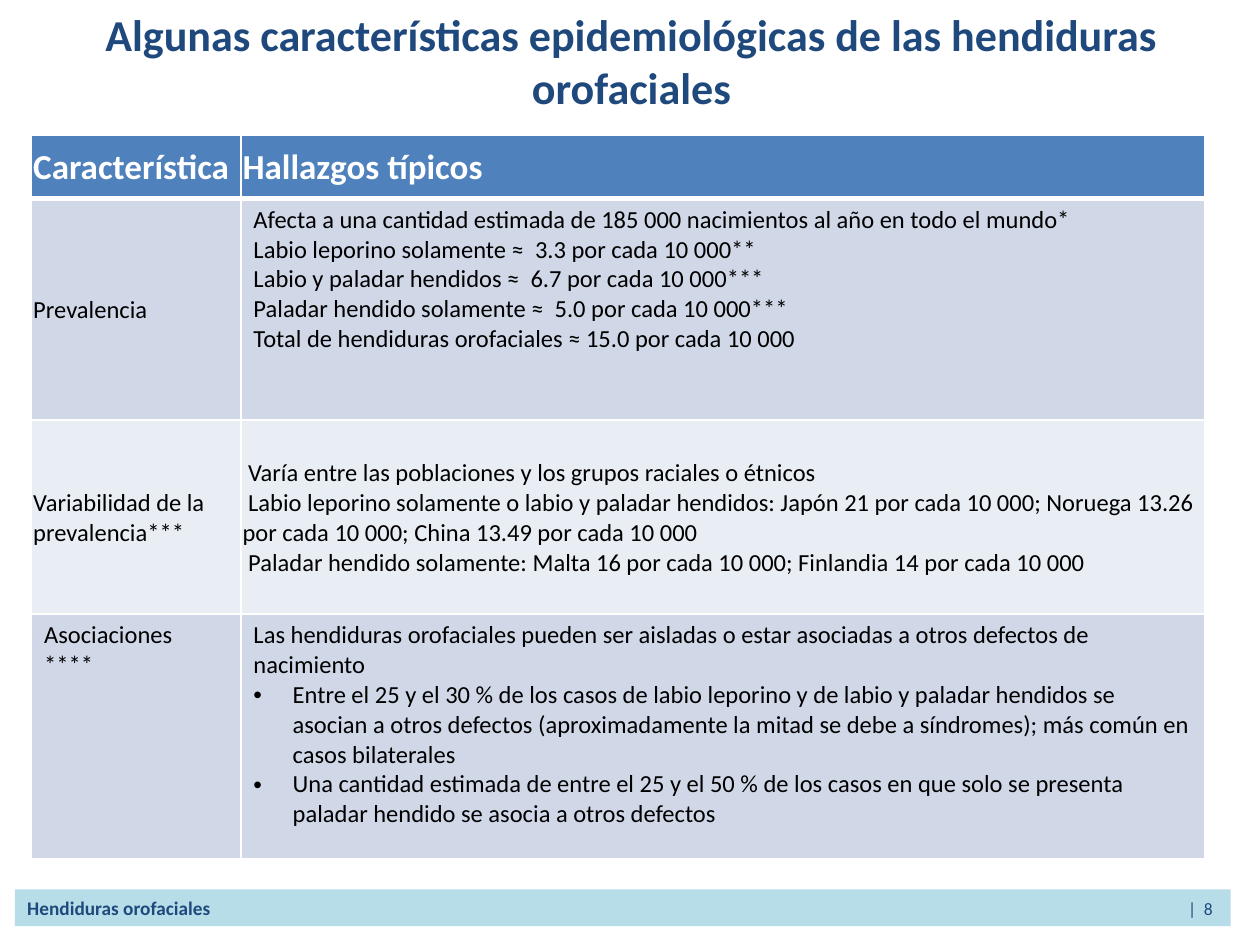
from lxml import etree
from pptx import Presentation
from pptx.dml.color import RGBColor
from pptx.enum.shapes import MSO_SHAPE
from pptx.enum.text import MSO_ANCHOR, PP_ALIGN
from pptx.oxml.ns import qn
from pptx.util import Cm, Pt

RECTANGLE = MSO_SHAPE.RECTANGLE
TOP, MIDDLE = MSO_ANCHOR.TOP, MSO_ANCHOR.MIDDLE
LEFT, CENTER = PP_ALIGN.LEFT, PP_ALIGN.CENTER

COLORS = {
    "navy": "1F497D",
    "footer": "B7DEE8",
    "header": "4F81BD",
    "band": "D0D8E8",
    "light": "E9EDF4",
    "white": "FFFFFF",
    "black": "000000",
}


def add_text(paragraph, text, size, color, bold):
    run = paragraph.add_run()
    run.text = text
    font_format = {"name": "Calibri", "size": Pt(size), "bold": bold}
    for name, value in font_format.items():
        setattr(run.font, name, value)
    run.font.color.rgb = RGBColor.from_string(COLORS[color])


def add_border(cell, side, width):
    properties = cell._tc.get_or_add_tcPr()
    line = etree.SubElement(properties, qn(f"a:ln{side}"), w=str(Pt(width)))
    fill = etree.SubElement(line, qn("a:solidFill"))
    etree.SubElement(fill, qn("a:srgbClr"), val=COLORS["white"])


presentation = Presentation()
presentation.slide_width = Cm(25.4)
presentation.slide_height = Cm(19.05)
slide = presentation.slides.add_slide(presentation.slide_layouts[6])

footer = slide.shapes.add_shape(RECTANGLE, Cm(0.3), Cm(17.93), Cm(24.51), Cm(0.74))
footer.shadow.inherit = False
footer.fill.solid()
footer.fill.fore_color.rgb = RGBColor.from_string(COLORS["footer"])
footer.line.fill.background()
footer.text_frame.vertical_anchor = MIDDLE
paragraph = footer.text_frame.paragraphs[0]
paragraph.alignment = LEFT
tabs = etree.SubElement(paragraph._p.get_or_add_pPr(), qn("a:tabLst"))
etree.SubElement(tabs, qn("a:tab"), pos=str(Cm(23.9)), algn="r")
add_text(paragraph, "Hendiduras orofaciales\t", 11, "navy", True)
add_text(paragraph, "|  8", 10, "navy", False)

title = slide.shapes.add_textbox(Cm(1.3), Cm(0.13), Cm(22.86), Cm(2.16))
title.text_frame.word_wrap = True
title.text_frame.vertical_anchor = MIDDLE
paragraph = title.text_frame.paragraphs[0]
paragraph.alignment = CENTER
add_text(
    paragraph,
    "Algunas características epidemiológicas de las hendiduras orofaciales",
    25.2, "navy", True,
)

TIGHT = {
    "vertical_anchor": MIDDLE,
    "margin_left": Cm(0.03),
    "margin_right": Cm(0.03),
    "margin_top": Cm(0.03),
    "margin_bottom": Cm(0),
}
ROOMY = {
    "vertical_anchor": TOP,
    "margin_left": Cm(0.25),
    "margin_right": Cm(0.25),
    "margin_top": Cm(0.13),
    "margin_bottom": Cm(0.13),
}
BULLET = "• "
rows = [
    (1.27, "header", [
        (TIGHT, ["Característica"]),
        (TIGHT, ["Hallazgos típicos"]),
    ]),
    (4.47, "band", [
        (TIGHT, ["Prevalencia"]),
        (ROOMY, [
            "Afecta a una cantidad estimada de 185 000 nacimientos al año en todo el mundo*",
            "Labio leporino solamente ≈  3.3 por cada 10 000**",
            "Labio y paladar hendidos ≈  6.7 por cada 10 000***",
            "Paladar hendido solamente ≈  5.0 por cada 10 000***",
            "Total de hendiduras orofaciales ≈ 15.0 por cada 10 000",
        ]),
    ]),
    (3.91, "light", [
        (TIGHT, ["Variabilidad de la prevalencia***"]),
        (TIGHT, [
            " Varía entre las poblaciones y los grupos raciales o étnicos",
            " Labio leporino solamente o labio y paladar hendidos: Japón 21 por cada 10 000; "
            "Noruega 13.26 por cada 10 000; China 13.49 por cada 10 000",
            " Paladar hendido solamente: Malta 16 por cada 10 000; Finlandia 14 por cada 10 000",
        ]),
    ]),
    (4.93, "band", [
        (ROOMY, ["Asociaciones", "****"]),
        (ROOMY, [
            "Las hendiduras orofaciales pueden ser aisladas o estar asociadas a otros defectos "
            "de nacimiento",
            BULLET + "Entre el 25 y el 30 % de los casos de labio leporino y de labio y paladar "
            "hendidos se asocian a otros defectos (aproximadamente la mitad se debe a "
            "síndromes); más común en casos bilaterales",
            BULLET + "Una cantidad estimada de entre el 25 y el 50 % de los casos en que solo "
            "se presenta paladar hendido se asocia a otros defectos",
        ]),
    ]),
]
column_widths = [4.22, 19.43]

table = slide.shapes.add_table(
    len(rows), len(column_widths), Cm(0.64), Cm(2.73),
    Cm(sum(column_widths)), Cm(sum(row[0] for row in rows)),
).table
for column, width in zip(table.columns, column_widths):
    column.width = Cm(width)

for row_index, (height, fill_color, contents) in enumerate(rows):
    table.rows[row_index].height = Cm(height)
    is_header = row_index == 0
    size, color = (20, "white") if is_header else (14, "black")
    for column_index, (cell_format, texts) in enumerate(contents):
        cell = table.cell(row_index, column_index)
        for name, value in cell_format.items():
            setattr(cell, name, value)
        for side in "LRTB":
            thick = (is_header and side == "B") or (row_index == 1 and side == "T")
            add_border(cell, side, 3 if thick else 1)
        cell.fill.solid()
        cell.fill.fore_color.rgb = RGBColor.from_string(COLORS[fill_color])
        for text_index, text in enumerate(texts):
            frame = cell.text_frame
            paragraph = frame.add_paragraph() if text_index else frame.paragraphs[0]
            if text.startswith(BULLET):
                properties = paragraph._p.get_or_add_pPr()
                properties.set("marL", str(Cm(0.79)))
                properties.set("indent", str(-Cm(0.79)))
                etree.SubElement(properties, qn("a:buFont"), typeface="Arial")
                etree.SubElement(properties, qn("a:buChar"), char="•")
            add_text(paragraph, text.removeprefix(BULLET), size, color, is_header)

presentation.save("out.pptx")
